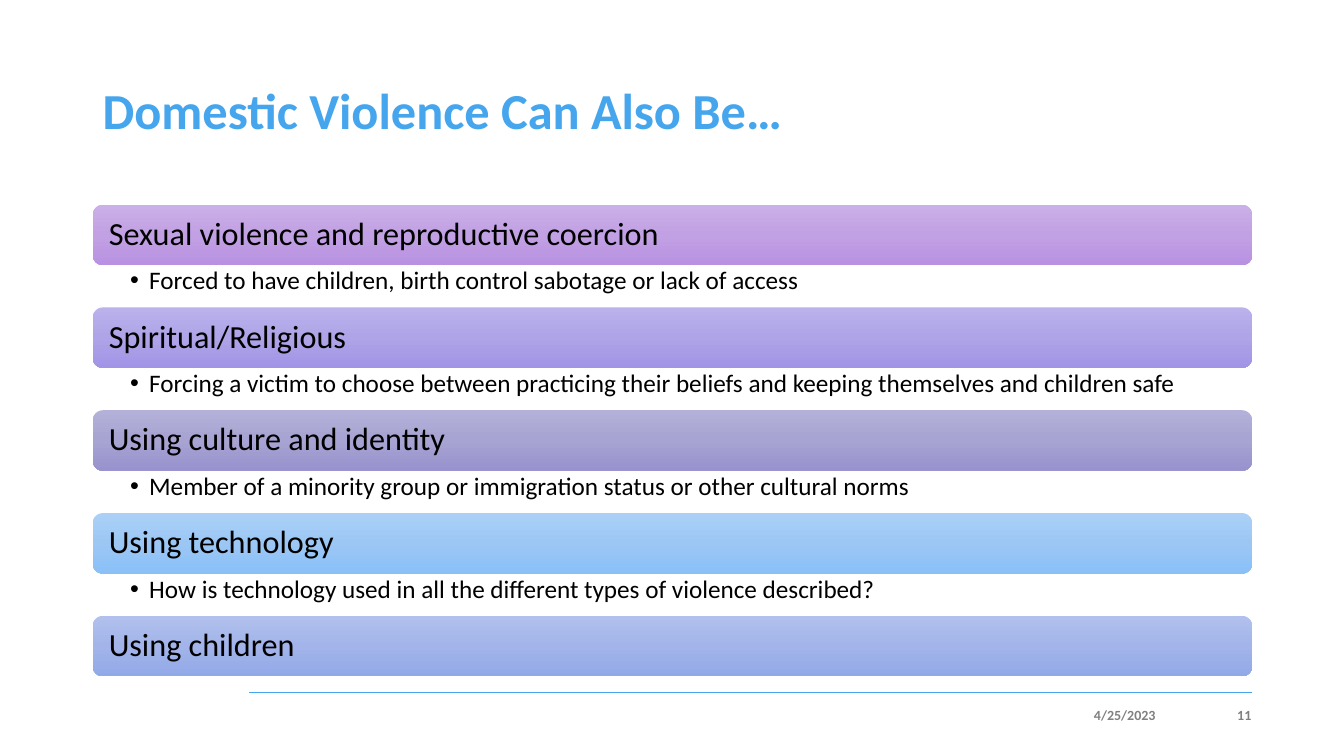
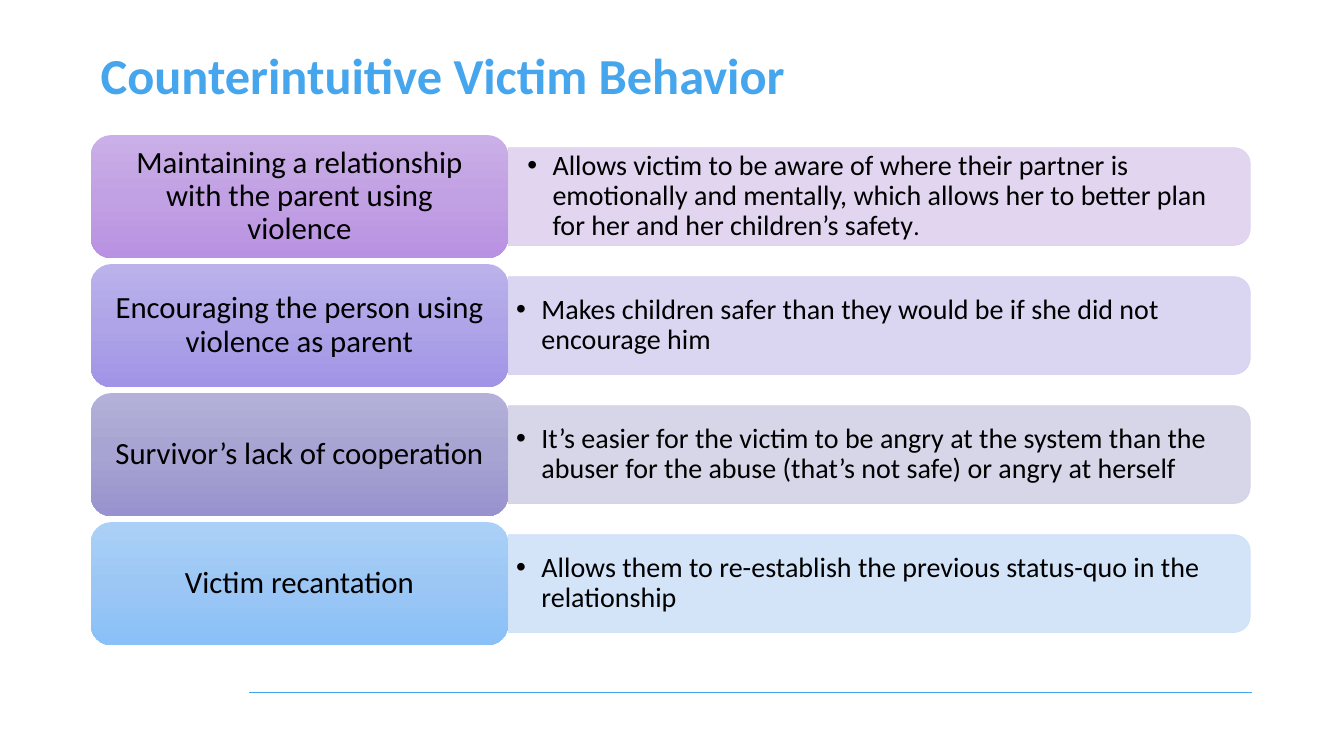
import copy

import pptx
import pptx.dml.color
import pptx.enum.shapes
import pptx.enum.text
import pptx.oxml.ns
import pptx.oxml.xmlchemy
import pptx.util

Inches = pptx.util.Inches
Pt = pptx.util.Pt
RGBColor = pptx.dml.color.RGBColor
SHAPE = pptx.enum.shapes.MSO_SHAPE
ALIGN = pptx.enum.text.PP_ALIGN
ANCHOR = pptx.enum.text.MSO_ANCHOR
qn = pptx.oxml.ns.qn
make = pptx.oxml.xmlchemy.OxmlElement

FONT = "Calibri"
BLUE = RGBColor(0x45, 0xA5, 0xED)
GRAY = RGBColor(0x80, 0x80, 0x80)
BLACK = RGBColor(0, 0, 0)

# Top, middle and bottom of each gradient, shared by both slides
SHADES = [
    [RGBColor.from_string(code) for code in row.split()]
    for row in (
        "CBAFE8 C1A1E3 B991E3",
        "BBB2EC AEA4E7 A194E7",
        "B3B1D9 A7A3D2 9893CE",
        "ABD0F7 9CC7F5 89C0F7",
        "B1C0ED A2B4E9 92A9E9",
    )
]
TINTS = [
    RGBColor(0xDE, 0xD1, 0xEF),
    RGBColor(0xD6, 0xD2, 0xF1),
    RGBColor(0xD3, 0xD2, 0xE6),
    RGBColor(0xCF, 0xE1, 0xF8),
]

TOPICS = [
    ("Sexual violence and reproductive coercion",
     "Forced to have children, birth control sabotage or lack of access"),
    ("Spiritual/Religious",
     "Forcing a victim to choose between practicing their beliefs and "
     "keeping themselves and children safe"),
    ("Using culture and identity",
     "Member of a minority group or immigration status or other cultural norms"),
    ("Using technology",
     "How is technology used in all the different types of violence described?"),
    ("Using children", None),
]

# Label, runs of (text, size), side and top insets
REASONS = [
    ("Maintaining a relationship with the parent using violence",
     [("Allows victim to be aware of where their partner is emotionally and "
       "mentally, which allows her to better plan for her and her children’s "
       "safety", 20), (".", 18)], (0.19, 0.09)),
    ("Encouraging the person using violence as parent",
     [("Makes children safer than they would be if she did not encourage him",
       20)], (0.08, 0.04)),
    ("Survivor’s lack of cooperation",
     [("It’s easier for the victim to be angry at the system than the abuser "
       "for the abuse (that’s not safe) or angry at herself", 20)],
     (0.08, 0.04)),
    ("Victim recantation",
     [("Allows them to re-establish the previous status-quo in the "
       "relationship", 20)], (0.08, 0.04)),
]


def write(shape, runs, color=BLACK, bold=False, align=ALIGN.LEFT,
          anchor=ANCHOR.MIDDLE, pad=(0.1, 0.05, 0.1, 0.05), hang=0, lead=0.9):
    """Fill a shape with one paragraph; hang is the bullet indent in inches."""
    frame = shape.text_frame
    frame.word_wrap = True
    frame.vertical_anchor = anchor
    (frame.margin_left, frame.margin_top,
     frame.margin_right, frame.margin_bottom) = map(Inches, pad)
    para = frame.paragraphs[0]
    if hang:
        props = para._p.get_or_add_pPr()
        props.set("marL", str(Inches(hang)))
        props.set("indent", str(-Inches(hang)))
        for tag, key, value in (("a:buFont", "typeface", "Arial"),
                                ("a:buChar", "char", "•")):
            mark = make(tag)
            mark.set(key, value)
            props.append(mark)
    para.alignment = align
    para.line_spacing = lead
    for text, size in runs:
        run = para.add_run()
        run.text = text
        run.font.name = FONT
        run.font.size = Pt(size)
        run.font.bold = bold
        run.font.color.rgb = color


def add_text(slide, box, runs, **style):
    write(slide.shapes.add_textbox(*map(Inches, box)), runs, **style)


def add_block(slide, box, shades, runs, **style):
    """Draw a rounded block with a top-down gradient and its text."""
    block = slide.shapes.add_shape(SHAPE.ROUNDED_RECTANGLE, *map(Inches, box))
    block.shadow.inherit = False
    block.line.fill.background()
    block.fill.gradient()
    block.fill.gradient_angle = 270
    first = block.fill.gradient_stops[0]._gs
    middle = copy.deepcopy(first)
    middle.set("pos", "50000")
    first.addnext(middle)
    for stop, shade in zip(block.fill.gradient_stops, shades):
        stop.color.rgb = shade
    write(block, runs, **style)


def add_strip(slide, left, mid, width, height, tint):
    """Draw a strip with round right corners: a top-rounded shape turned 90°."""
    strip = slide.shapes.add_shape(
        SHAPE.ROUND_2_SAME_RECTANGLE,
        Inches(left + (width - height) / 2), Inches(mid - width / 2),
        Inches(height), Inches(width))
    strip.rotation = 90
    strip.shadow.inherit = False
    strip.fill.solid()
    strip.fill.fore_color.rgb = tint
    strip.line.color.rgb = tint
    strip.line.width = Pt(0.5)
    for color in strip._element.spPr.iter(qn("a:srgbClr")):
        alpha = make("a:alpha")
        alpha.set("val", "90000")
        color.append(alpha)


def add_slide(deck, title, box):
    """Add a slide with the shared title style and bottom rule."""
    slide = deck.slides.add_slide(deck.slide_layouts[6])
    rule = slide.shapes.add_connector(
        pptx.enum.shapes.MSO_CONNECTOR.STRAIGHT,
        Inches(2.47), Inches(6.87), Inches(12.42), Inches(6.87))
    rule.line.color.rgb = BLUE
    rule.line.width = Pt(0.5)
    rule._element.spPr.append(make("a:effectLst"))
    add_text(slide, box, [(title, 36)], color=BLUE, bold=True)
    return slide


def add_foot(slide, date, page):
    for text, left, width in ((date, 8.46, 3), (page, 11.62, 0.79)):
        add_text(slide, (left, 6.95, width, 0.28), [(text, 10)], color=GRAY,
                 bold=True, align=ALIGN.RIGHT, pad=(0, 0.05, 0, 0.05), lead=1)


def draw_topics(deck):
    slide = add_slide(deck, "Domestic Violence Can Also Be…",
                      (0.92, 0.4, 11.5, 1.45))
    left, top, width, height, pitch = 0.92, 2.03, 11.5, 0.6, 1.02
    for row, (head, note) in enumerate(TOPICS):
        y = top + row * pitch
        add_block(slide, (left, y, width, height), SHADES[row], [(head, 23)],
                  pad=(0.13, 0.1, 0.13, 0.1))
        if note:
            add_text(slide, (left, y + height, width, pitch - height),
                     [(note, 18)], anchor=ANCHOR.TOP,
                     pad=(0.37, 0.03, 0.18, 0.03), hang=0.19)
    add_foot(slide, "4/25/2023", "11")


def draw_reasons(deck):
    slide = add_slide(deck, "Counterintuitive Victim Behavior",
                      (0.9, -0.04, 7.81, 1.64))
    left, top, width, height, pitch = 0.9, 1.34, 4.14, 1.22, 1.28
    edge = left + width
    for row, (label, runs, (side, rim)) in enumerate(REASONS):
        y = top + row * pitch
        mid = y + height / 2
        add_strip(slide, edge, mid, 7.36, 0.97, TINTS[row])
        add_text(slide, (edge, mid - 0.44, 7.31, 0.88), runs,
                 pad=(side, rim, side, rim), hang=0.25)
        add_block(slide, (left, y, width, height), SHADES[row], [(label, 22)],
                  align=ALIGN.CENTER, pad=(0.15, 0.11, 0.15, 0.11))


def main():
    deck = pptx.Presentation()
    deck.slide_width = Inches(13.33)
    deck.slide_height = Inches(7.5)
    draw_topics(deck)
    draw_reasons(deck)
    deck.save("out.pptx")


if __name__ == "__main__":
    main()
